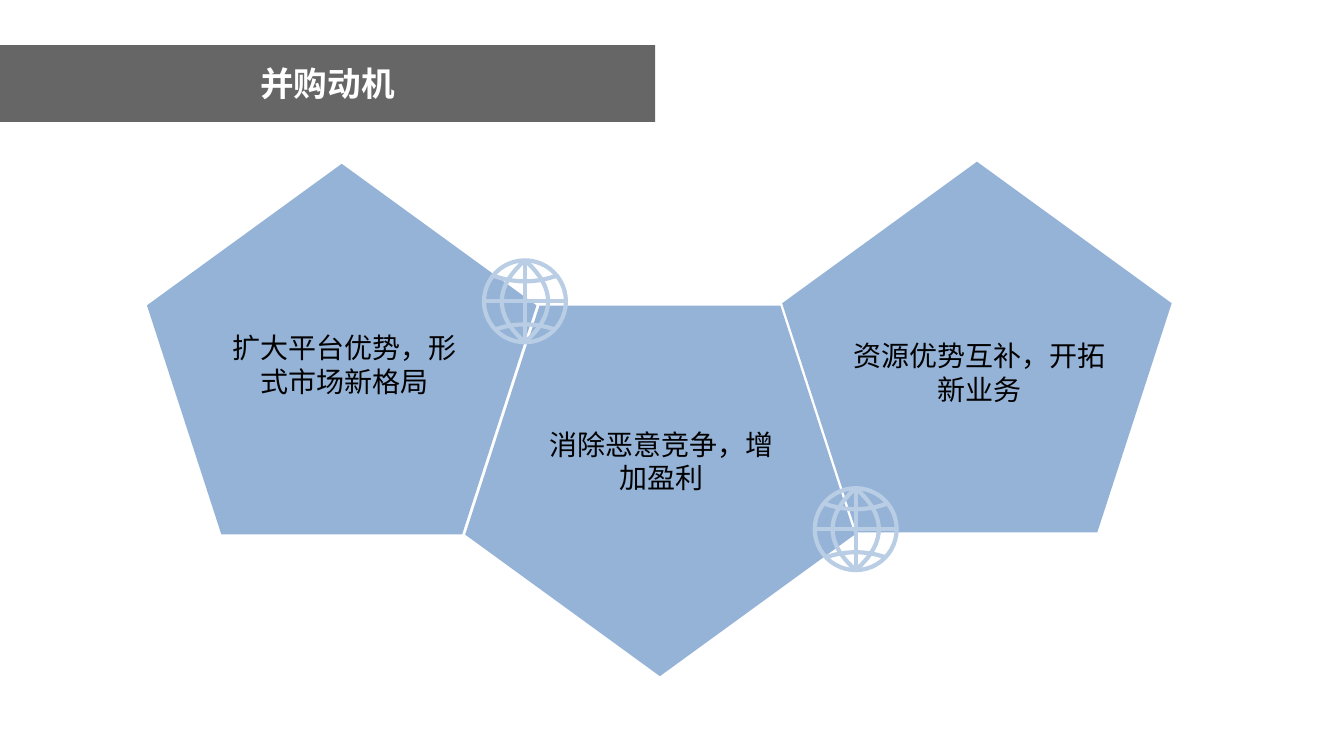
"""Build the slide on merger motives: three pentagons joined by two globes."""
from dataclasses import dataclass
from math import cos, pi, sin

from lxml.etree import SubElement
from pptx import Presentation
from pptx.dml.color import RGBColor
from pptx.dml.fill import FillFormat
from pptx.enum.shapes import MSO_SHAPE as Shape
from pptx.enum.text import MSO_ANCHOR as Anchor, MSO_AUTO_SIZE as AutoSize, PP_ALIGN as Align
from pptx.oxml.ns import qn
from pptx.slide import Slide
from pptx.text.text import TextFrame
from pptx.util import Emu, Pt

PX = 9525
FONT = "Noto Sans CJK SC"
BLACK = RGBColor(0x00, 0x00, 0x00)
WHITE = RGBColor(0xFF, 0xFF, 0xFF)
BLUE = RGBColor(0x4F, 0x81, 0xBD)
PALE_BLUE = RGBColor(0xB9, 0xCD, 0xE5)
OPACITY = 60
PENTAGON_WIDTH, PENTAGON_HEIGHT = 371, 353
GLOBE_RADIUS = 39
GLOBE_STEPS = 48

Point = tuple[float, float]


@dataclass(frozen=True)
class Box:
    left: int
    top: int
    width: int
    height: int

    def emu(self) -> tuple[Emu, Emu, Emu, Emu]:
        return Emu(self.left * PX), Emu(self.top * PX), Emu(self.width * PX), Emu(self.height * PX)


@dataclass(frozen=True)
class Motive:
    text: str
    left: int
    top: int
    rotation: int
    text_box: Box


@dataclass(frozen=True)
class Globe:
    center_x: int
    center_y: int


TITLE_BOX = Box(0, 43, 624, 73)
MOTIVES = (
    Motive("扩大平台优势，形式市场新格局", 140, 156, 0, Box(202, 310, 252, 107)),
    Motive("消除恶意竞争，增加盈利", 443, 291, 180, Box(505, 402, 250, 74)),
    Motive("资源优势互补，开拓新业务", 745, 154, 0, Box(790, 318, 286, 74)),
)
GLOBES = (Globe(500, 287), Globe(815, 504))


def fill_translucent(fill: FillFormat, color: RGBColor) -> None:
    fill.solid()
    fill.fore_color.rgb = color
    color_element = fill._xPr.find(qn("a:solidFill"))[0]
    SubElement(color_element, qn("a:alpha")).set("val", str(OPACITY * 1000))


def write_text(frame: TextFrame, text: str, size: int, color: RGBColor, bold: bool) -> None:
    frame.word_wrap = True
    frame.auto_size = AutoSize.NONE
    paragraph = frame.paragraphs[0]
    paragraph.alignment = Align.CENTER
    run = paragraph.add_run()
    run.text = text
    run.font.name = FONT
    run.font.size = Pt(size)
    run.font.bold = bold
    run.font.color.rgb = color
    SubElement(run.font._element, qn("a:ea")).set("typeface", FONT)


def add_title(slide: Slide, text: str) -> None:
    title = slide.shapes.title
    title.left, title.top, title.width, title.height = TITLE_BOX.emu()
    fill_translucent(title.fill, BLACK)
    title.text_frame.vertical_anchor = Anchor.MIDDLE
    write_text(title.text_frame, text, 24, WHITE, True)


def add_pentagon(slide: Slide, motive: Motive) -> None:
    box = Box(motive.left, motive.top, PENTAGON_WIDTH, PENTAGON_HEIGHT)
    pentagon = slide.shapes.add_shape(Shape.REGULAR_PENTAGON, *box.emu())
    pentagon.rotation = motive.rotation
    pentagon.shadow.inherit = False
    pentagon.line.fill.background()
    fill_translucent(pentagon.fill, BLUE)


def add_motive_text(slide: Slide, motive: Motive) -> None:
    text_box = slide.shapes.add_textbox(*motive.text_box.emu())
    write_text(text_box.text_frame, motive.text, 20, BLACK, False)


def globe_strokes() -> list[list[Point]]:
    radius = GLOBE_RADIUS
    angles = [2 * pi * step / GLOBE_STEPS for step in range(GLOBE_STEPS + 1)]
    spread = [2 * step / GLOBE_STEPS - 1 for step in range(GLOBE_STEPS + 1)]
    circle = [(radius * cos(angle), radius * sin(angle)) for angle in angles]
    axes = [[(-radius, 0), (radius, 0)], [(0, -radius), (0, radius)]]
    meridians = [[(side * 22 * (1 - t * t), radius * t) for t in spread] for side in (-1, 1)]
    parallels = [[(29 * t, side * (depth + 5 * t * t)) for t in spread]
                 for side, depth in ((-1, 19), (1, 22))]
    return [circle, *axes, *meridians, *parallels]


def add_globe(slide: Slide, globe: Globe) -> None:
    strokes = [[((globe.center_x + x) * PX, (globe.center_y + y) * PX) for x, y in stroke]
               for stroke in globe_strokes()]
    builder = slide.shapes.build_freeform(*strokes[0][0], scale=1.0)
    for stroke in strokes:
        builder.move_to(*stroke[0])
        builder.add_line_segments(stroke[1:], close=False)
    shape = builder.convert_to_shape()
    shape.shadow.inherit = False
    shape.fill.background()
    shape.line.color.rgb = PALE_BLUE
    shape.line.width = Pt(3)


def main() -> None:
    presentation = Presentation()
    presentation.slide_width, presentation.slide_height = Emu(1280 * PX), Emu(720 * PX)
    slide = presentation.slides.add_slide(presentation.slide_layouts.get_by_name("Title Only"))
    add_title(slide, "并购动机")
    for motive in MOTIVES:
        add_pentagon(slide, motive)
    for globe in GLOBES:
        add_globe(slide, globe)
    for motive in MOTIVES:
        add_motive_text(slide, motive)
    presentation.save("out.pptx")


if __name__ == "__main__":
    main()
